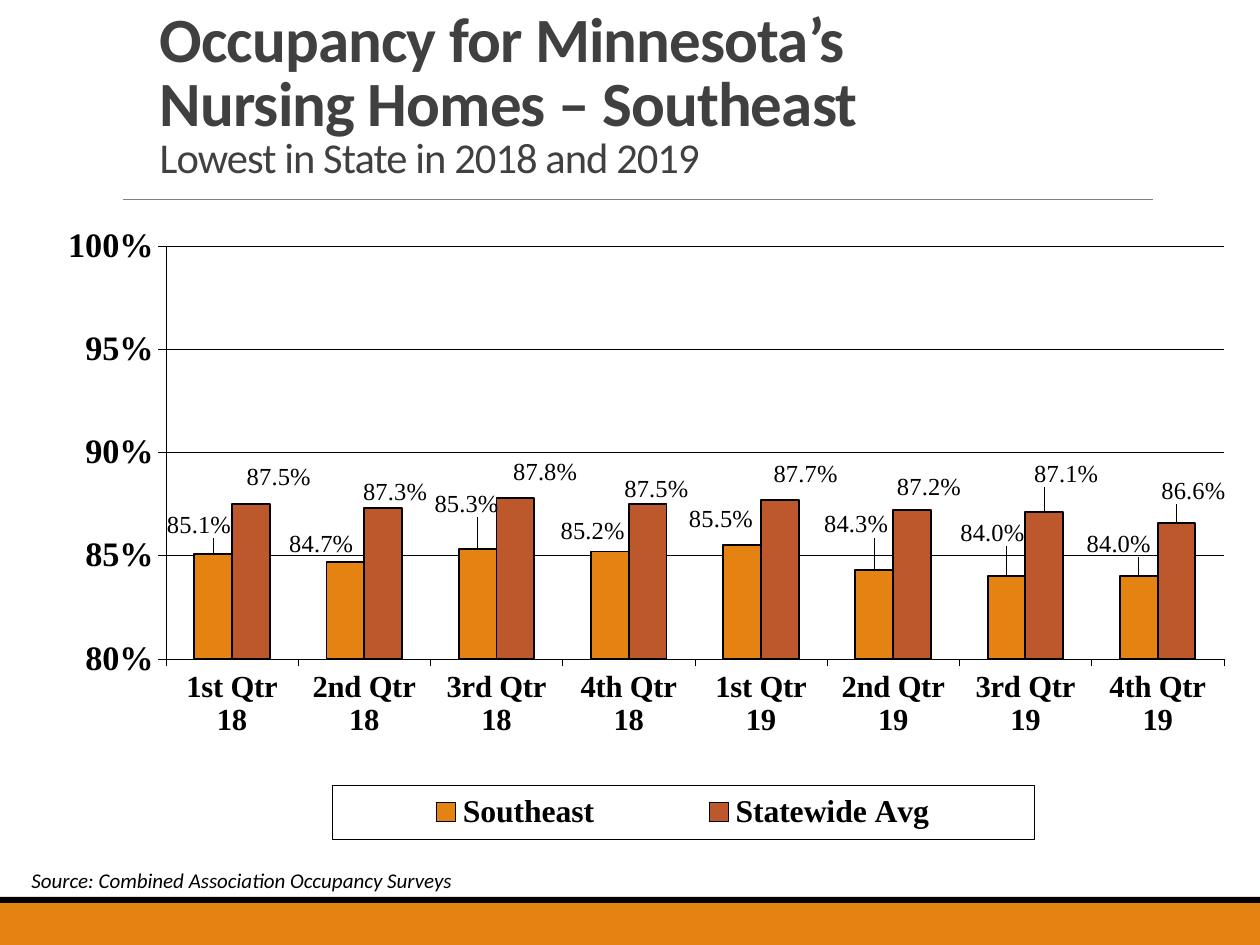
from dataclasses import dataclass

from lxml.etree import SubElement
from pptx import Presentation
from pptx.chart.data import CategoryChartData
from pptx.dml.color import RGBColor
from pptx.enum.chart import (XL_CHART_TYPE, XL_LABEL_POSITION,
                             XL_LEGEND_POSITION, XL_TICK_MARK)
from pptx.enum.shapes import MSO_CONNECTOR, MSO_SHAPE
from pptx.enum.text import MSO_ANCHOR, MSO_AUTO_SIZE, PP_ALIGN
from pptx.oxml import parse_xml
from pptx.oxml.ns import nsdecls, qn
from pptx.util import Emu, Pt

HEAD = [("Occupancy for Minnesota’s ", True),
        ("Nursing Homes – Southeast", True),
        ("Lowest in State in 2018 and 2019", False)]
SOURCE = "Source: Combined Association Occupancy Surveys"
QUARTERS = [f"{q} Qtr {y}" for y in (18, 19)
            for q in ("1st", "2nd", "3rd", "4th")]
# name, colour, values, label shifts in px from the bar's outside end
SERIES = [
    ("Southeast", "E48312",
     (0.851, 0.847, 0.853, 0.852, 0.855, 0.843, 0.84, 0.84),
     ((-14, -10), (-24, 1), (-11, -27), (-17, -2),
      (-21, -8), (-18, -27), (-14, -25), (-20, -14))),
    ("Statewide Avg", "BD582C",
     (0.875, 0.873, 0.878, 0.875, 0.877, 0.872, 0.871, 0.866),
     ((28, -8), (12, 2), (30, -7), (9, 4),
      (26, -7), (17, -5), (22, -20), (17, -13))),
]
CHART = (21, 200, 1218, 641)
PLOT = (166, 246, 1058, 413)
LEGEND = (332, 785, 702, 54)


@dataclass(frozen=True)
class Theme:
    sans: str = "Calibri"
    serif: str = "Times New Roman"
    ink: str = "000000"
    title: str = "404040"
    rule: str = "808080"
    band: str = "E48312"
    head: float = 36
    sub: float = 24.3
    note: float = 12
    value: float = 19.6
    cat: float = 17.5
    key: float = 18.1
    label: float = 14
    hair: float = 0.27
    edge: float = 1.09


T = Theme()


def px(n):
    return Emu(n * 914400 // 126)


def style(font, face, size, color, bold=False, italic=False):
    font.name, font.size = face, Pt(size)
    font.bold, font.italic = bold, italic
    font.color.rgb = RGBColor.from_string(color)


def stroke(line, width, color=T.ink):
    line.color.rgb = RGBColor.from_string(color)
    line.width = Pt(width)


def bar(slide, box, color):
    shape = slide.shapes.add_shape(MSO_SHAPE.RECTANGLE, *map(px, box))
    shape.shadow.inherit = False
    shape.fill.solid()
    shape.fill.fore_color.rgb = RGBColor.from_string(color)
    shape.line.fill.background()


def layout(box, inner=False):
    """Manual chart layout for a box given in slide px."""
    x, y, w, h = box
    left, top, wide, high = CHART
    parts = [("xMode", "edge"), ("yMode", "edge"),
             ("x", round((x - left) / wide, 4)),
             ("y", round((y - top) / high, 4)),
             ("w", round(w / wide, 4)), ("h", round(h / high, 4))]
    if inner:
        parts.insert(0, ("layoutTarget", "inner"))
    return make(parts)


def make(parts):
    body = "".join(f'<c:{k} val="{v}"/>' for k, v in parts)
    return parse_xml(f'<c:layout {nsdecls("c")}><c:manualLayout>{body}'
                     '</c:manualLayout></c:layout>')


def put(parent, node, after):
    """Place node after the named child, in place of any old layout."""
    for old in parent.findall(qn("c:layout")):
        parent.remove(old)
    if after is None:
        parent.insert(0, node)
    else:
        parent.find(qn(after)).addnext(node)


def tag(series, shifts):
    for i, (dx, dy) in enumerate(shifts):
        label = series.points[i].data_label
        style(label.font, T.serif, T.label, T.ink)
        label.position = XL_LABEL_POSITION.OUTSIDE_END
    labels = series.data_labels
    style(labels.font, T.serif, T.label, T.ink)
    labels.number_format = "0.0%"
    labels.number_format_is_linked = False
    labels.show_value = True
    labels.position = XL_LABEL_POSITION.OUTSIDE_END
    nodes = series._element.iter(qn("c:dLbl"))
    for node, (dx, dy) in zip(list(nodes), shifts):
        put(node, make([("x", round(dx / CHART[2], 4)),
                        ("y", round(dy / CHART[3], 4))]), "c:idx")
        node.find(qn("c:layout")).addnext(parse_xml(
            f'<c:numFmt {nsdecls("c")} formatCode="0.0%" sourceLinked="0"/>'))


def add_title(slide):
    title = slide.shapes.title
    title.left, title.top, title.width, title.height = map(
        px, (147, 32, 1092, 189 - 32))
    frame = title.text_frame
    frame.word_wrap = True
    frame.auto_size = MSO_AUTO_SIZE.NONE
    frame.vertical_anchor = MSO_ANCHOR.BOTTOM
    para = frame.paragraphs[0]
    para.alignment, para.line_spacing = PP_ALIGN.LEFT, 0.85
    for i, (text, bold) in enumerate(HEAD):
        if i:
            para.add_line_break()
        run = para.add_run()
        run.text = text
        style(run.font, T.sans, T.head if bold else T.sub, T.title, bold)
        run.font._element.set("spc", "-50")


def add_chart(slide):
    data = CategoryChartData(number_format="0.0%")
    data.categories = QUARTERS
    for name, _, values, _ in SERIES:
        data.add_series(name, values)
    chart = slide.shapes.add_chart(
        XL_CHART_TYPE.COLUMN_CLUSTERED, *map(px, CHART), data).chart
    chart.has_title = False
    style(chart.font, T.serif, T.value, T.ink, True)
    plot = chart.plots[0]
    plot.gap_width, plot.overlap, plot.vary_by_categories = 150, 0, False
    for series, (_, color, _, shifts) in zip(plot.series, SERIES):
        series.format.fill.solid()
        series.format.fill.fore_color.rgb = RGBColor.from_string(color)
        stroke(series.format.line, T.edge)
        tag(series, shifts)

    rows, cols = chart.value_axis, chart.category_axis
    for axis, size in ((rows, T.value), (cols, T.cat)):
        style(axis.tick_labels.font, T.serif, size, T.ink, True)
        stroke(axis.format.line, T.hair)
        axis.major_tick_mark = XL_TICK_MARK.OUTSIDE
        axis.minor_tick_mark = XL_TICK_MARK.NONE
    rows.minimum_scale, rows.maximum_scale, rows.major_unit = 0.8, 1, 0.05
    rows.tick_labels.number_format = "0%"
    rows.tick_labels.number_format_is_linked = False
    stroke(rows.major_gridlines.format.line, T.hair)

    chart.has_legend = True
    key = chart.legend
    key.position, key.include_in_layout = XL_LEGEND_POSITION.BOTTOM, False
    style(key.font, T.serif, T.key, T.ink, True)
    node = key._element
    put(node, layout(LEGEND), "c:legendPos")
    node.find(qn("c:overlay")).addnext(parse_xml(
        f'<c:spPr {nsdecls("c", "a")}><a:ln w="{Pt(T.hair)}"><a:solidFill>'
        f'<a:srgbClr val="{T.ink}"/></a:solidFill></a:ln></c:spPr>'))
    put(plot._element.getparent(), layout(PLOT, True), None)


def add_source(slide):
    frame = slide.shapes.add_textbox(*map(px, (19, 861, 664, 63))).text_frame
    frame.word_wrap = True
    run = frame.paragraphs[0].add_run()
    run.text = SOURCE
    style(run.font, T.sans, T.note, T.ink, italic=True)


def main():
    deck = Presentation()
    deck.slide_width, deck.slide_height = px(1260), px(945)
    slide = deck.slides.add_slide(deck.slide_layouts[5])
    bar(slide, (0, 898, 1260, 47), T.band)
    bar(slide, (0, 897, 1260, 6), T.ink)
    rule = slide.shapes.add_connector(
        MSO_CONNECTOR.STRAIGHT, *map(px, (123, 199, 1153, 199)))
    stroke(rule.line, 0.5, T.rule)
    SubElement(rule._element.spPr, qn("a:effectLst"))
    add_title(slide)
    add_chart(slide)
    add_source(slide)
    deck.save("out.pptx")


if __name__ == "__main__":
    main()
